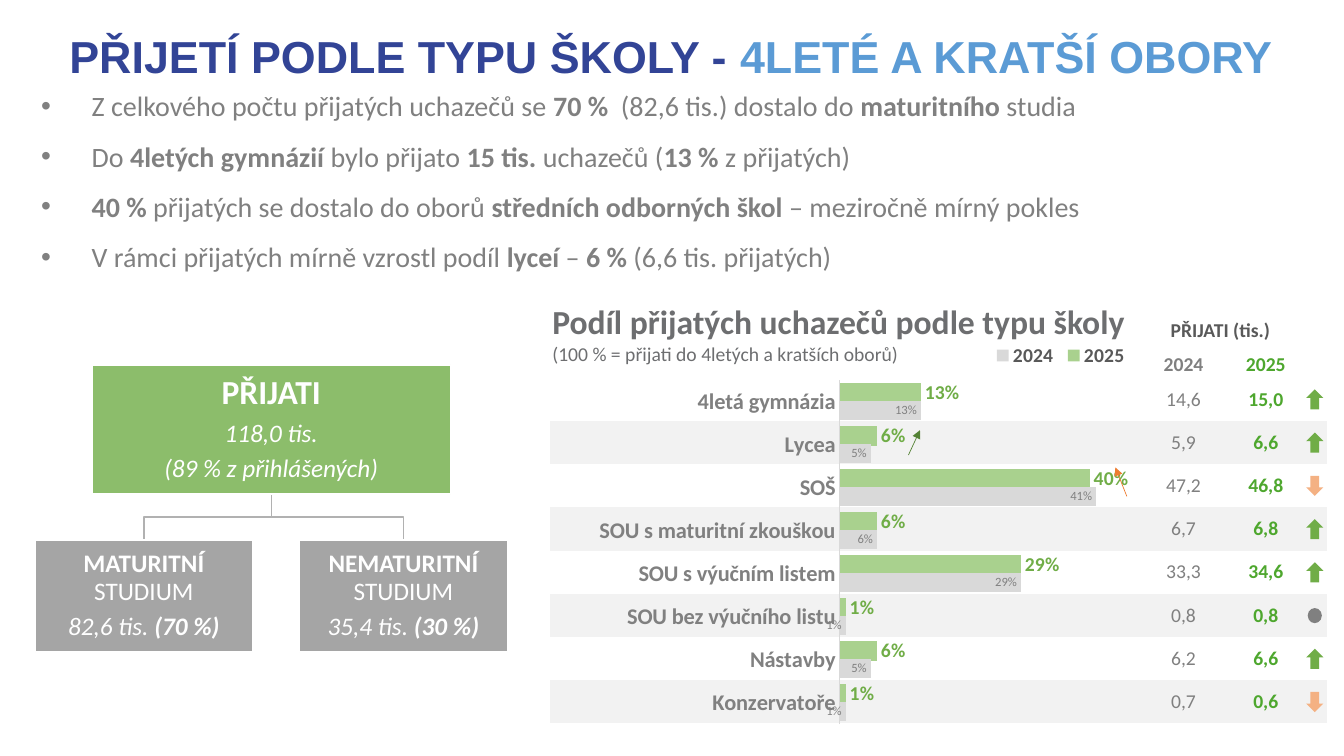
from dataclasses import dataclass

from lxml.etree import SubElement
from pptx import Presentation
from pptx.chart.data import CategoryChartData
from pptx.dml.color import RGBColor
from pptx.enum.chart import XL_CHART_TYPE, XL_LABEL_POSITION, XL_LEGEND_POSITION, XL_TICK_MARK
from pptx.enum.shapes import MSO_CONNECTOR, MSO_SHAPE
from pptx.enum.text import MSO_ANCHOR, PP_ALIGN
from pptx.oxml import parse_xml
from pptx.oxml.ns import nsdecls, qn
from pptx.util import Inches, Pt


@dataclass(frozen=True)
class Theme:
    """Colours, fonts and type sizes of the slide."""
    navy: str = "324496"
    sky: str = "5B9BD5"
    grey: str = "808080"
    dark: str = "595959"
    heading: str = "6D6E70"
    pale: str = "D9D9D9"
    band: str = "F2F2F2"
    rule: str = "B1B1B1"
    white: str = "FFFFFF"
    black: str = "000000"
    green: str = "70AD47"
    soft_green: str = "A9D18E"
    deep_green: str = "548235"
    figure_green: str = "4EA72E"
    orange: str = "ED7D31"
    peach: str = "F4B183"
    title_font: str = "Arial"
    font: str = "Calibri"
    title: int = 32
    large: int = 24
    body: int = 20
    box: int = 18
    axis: int = 16
    small: int = 14
    base: int = 10
    tiny: int = 9


@dataclass(frozen=True)
class Box:
    """An area of the slide in slide units."""
    left: int
    top: int
    width: int
    height: int

    def point(self, x, y):
        """Return the position at the given shares of the box."""
        return int(self.left + x * self.width), int(self.top + y * self.height)

    def inside(self, x, y, width, height):
        """Return the sub-box at the given shares of the box."""
        return Box(*self.point(x, y), int(width * self.width), int(height * self.height))

    def frame(self):
        """Return left, top, width and height."""
        return self.left, self.top, self.width, self.height


THEME = Theme()
SLIDE = Box(0, 0, Inches(13.33), Inches(7.5))
COLUMNS = (5.83, 0.9, 0.73, 0.24)
ROWS = (0.42, 0.26) + (0.43,) * 8
BULLETS = (
    "Z celkového počtu přijatých uchazečů se *70 %*  (82,6 tis.) dostalo do *maturitního* studia",
    "Do *4letých gymnázií *bylo přijato *15 tis. *uchazečů (*13 %* z přijatých)",
    "*40 %* přijatých se dostalo do oborů *středních odborných škol *– meziročně mírný pokles",
    "V rámci přijatých mírně vzrostl podíl *lyceí *–* 6 % *(6,6 tis. přijatých)",
)
SCHOOLS = (
    ("4letá gymnázia", 0.13, 0.13, "14,6", "15,0", "up"),
    ("Lycea", 0.06, 0.05, "5,9", "6,6", "up"),
    ("SOŠ", 0.4, 0.41, "47,2", "46,8", "down"),
    ("SOU s maturitní zkouškou", 0.06, 0.06, "6,7", "6,8", "up"),
    ("SOU s výučním listem", 0.29, 0.29, "33,3", "34,6", "up"),
    ("SOU bez výučního listu", 0.01, 0.01, "0,8", "0,8", "same"),
    ("Nástavby", 0.06, 0.05, "6,2", "6,6", "up"),
    ("Konzervatoře", 0.01, 0.01, "0,7", "0,6", "down"),
)


def grid(left, top, width, height):
    """Return a box measured in a grid of 100 columns and 100 rows."""
    return SLIDE.inside(left / 100, top / 100, width / 100, height / 100)


def set_font(font, size, colour, bold=None, name=THEME.font):
    """Set size, colour, weight and face of a font."""
    font.size, font.bold, font.name = Pt(size), bold, name
    font.color.rgb = RGBColor.from_string(colour)


def write(para, text, size, colour, **options):
    """Fill a paragraph, setting bold the spans between asterisks."""
    set_font(para.font, size, colour, **options)
    for index, piece in enumerate(text.split("*")):
        if piece:
            span = para.add_run()
            span.text = piece
            if index % 2:
                span.font.bold = True


def add_text(page, box):
    """Add a wrapping text box and return its text frame."""
    frame = page.shapes.add_textbox(*box.frame()).text_frame
    frame.word_wrap = True
    return frame


def next_para(frame, index):
    """Return the first paragraph of a frame or append another."""
    return frame.add_paragraph() if index else frame.paragraphs[0]


def add_solid(page, kind, box, colour):
    """Add a filled shape without outline or shadow."""
    shape = page.shapes.add_shape(kind, *box.frame())
    shape.shadow.inherit = False
    shape.fill.solid()
    shape.fill.fore_color.rgb = RGBColor.from_string(colour)
    shape.line.fill.background()
    return shape


def add_title(page, box):
    """Add the two-coloured title."""
    para = add_text(page, box).paragraphs[0]
    para.alignment, para.line_spacing = PP_ALIGN.CENTER, 1.05
    write(para, "PŘIJETÍ PODLE TYPU ŠKOLY - ", THEME.title, THEME.navy, bold=True, name=THEME.title_font)
    span = para.add_run()
    span.text = "4LETÉ A KRATŠÍ OBORY"
    span.font.color.rgb = RGBColor.from_string(THEME.sky)


def add_bullets(page, box):
    """Add the list of findings."""
    frame = add_text(page, box)
    for index, text in enumerate(BULLETS):
        para = next_para(frame, index)
        properties = para._p.get_or_add_pPr()
        properties.set("marL", str(Inches(0.5)))
        properties.set("indent", str(-Inches(0.5)))
        SubElement(properties, qn("a:buFont"), typeface=THEME.title_font)
        SubElement(properties, qn("a:buChar"), char="•")
        if index:
            para.space_before = Pt(12)
        write(para, text, THEME.body, THEME.grey)


def add_card(page, box, colour, opacity, lines):
    """Add one box of the hierarchy from (text, size, italic) lines."""
    card = add_solid(page, MSO_SHAPE.RECTANGLE, box, colour)
    fill = card._element.spPr.find(qn("a:solidFill"))
    SubElement(fill[0], qn("a:alpha"), val=str(opacity * 1000))
    card.line.color.rgb, card.line.width = RGBColor.from_string(THEME.white), Pt(1)
    frame = card.text_frame
    frame.word_wrap, frame.vertical_anchor = True, MSO_ANCHOR.MIDDLE
    frame.margin_left = frame.margin_right = frame.margin_top = frame.margin_bottom = Inches(0.01)
    for index, (text, size, italic) in enumerate(lines):
        para = next_para(frame, index)
        para.alignment, para.line_spacing, para.space_after = PP_ALIGN.CENTER, 0.9, Pt(6)
        write(para, text, size, THEME.white)
        para.font.italic = italic


def add_hierarchy(page, box):
    """Add the admitted total split into two kinds of study."""
    total = box.inside(0.12, 0, 0.76, 0.45)
    branches = (
        (box.inside(0, 0.61, 0.46, 0.39), "*MATURITNÍ* STUDIUM", "82,6 tis. *(70 %)*"),
        (box.inside(0.56, 0.61, 0.44, 0.39), "*NEMATURITNÍ* STUDIUM", "35,4 tis. *(30 %)*"),
    )
    for branch, _, _ in branches:
        start, end = total.point(0.5, 1), branch.point(0.5, 0)
        middle = (start[1] + end[1]) // 2
        builder = page.shapes.build_freeform(*start)
        builder.add_line_segments(((start[0], middle), (end[0], middle), end), close=False)
        link = builder.convert_to_shape()
        link.shadow.inherit = False
        link.fill.background()
        link.line.color.rgb, link.line.width = RGBColor.from_string(THEME.rule), Pt(1)
    add_card(page, total, THEME.green, 80, (
        ("*PŘIJATI*", THEME.large, False),
        ("118,0 tis.", THEME.box, True),
        ("(89 % z přihlášených)", THEME.box, True)))
    for branch, name, count in branches:
        add_card(page, branch, THEME.grey, 70, ((name, THEME.box, False), (count, THEME.box, True)))


def add_figures(page, box):
    """Add the banded table of admitted counts."""
    table = page.shapes.add_table(len(ROWS), len(COLUMNS), *box.frame()).table
    table.first_row = table.horz_banding = False
    table._tbl.tblPr.find(qn("a:tableStyleId")).text = "{2D5ABB26-0587-4C30-8999-92F81FD0307C}"
    for column, share in zip(table.columns, COLUMNS):
        column.width = int(box.width * share / sum(COLUMNS))
    for row, share in zip(table.rows, ROWS):
        row.height = int(box.height * share / sum(ROWS))
    table.cell(0, 1).merge(table.cell(0, 2))
    texts = [("", "PŘIJATI (tis.)", "", ""), ("", "2024", "2025", "")]
    texts += [("", school[3], school[4], "") for school in SCHOOLS]
    for row, line in enumerate(texts):
        for column, text in enumerate(line):
            cell = table.cell(row, column)
            cell.margin_left = cell.margin_right = cell.margin_top = cell.margin_bottom = 0
            cell.vertical_anchor = MSO_ANCHOR.MIDDLE
            if row > 1 and row % 2:
                cell.fill.solid()
                cell.fill.fore_color.rgb = RGBColor.from_string(THEME.band)
            else:
                cell.fill.background()
            para = cell.text_frame.paragraphs[0]
            para.alignment = PP_ALIGN.CENTER
            colour = THEME.dark if row == 0 else THEME.figure_green if column == 2 else THEME.grey
            write(para, text, THEME.small, colour, bold=row < 2 or column == 2)


def add_changes(page, box):
    """Add a marker of the yearly change at the end of each table row."""
    marks = {"up": (MSO_SHAPE.UP_ARROW, THEME.green, 0.17, 0.2),
             "down": (MSO_SHAPE.DOWN_ARROW, THEME.peach, 0.17, 0.2),
             "same": (MSO_SHAPE.OVAL, THEME.grey, 0.14, 0.15)}
    for row, school in enumerate(SCHOOLS, 2):
        kind, colour, width, height = marks[school[5]]
        x, y = box.point(1 - COLUMNS[-1] / 2 / sum(COLUMNS), (sum(ROWS[:row]) + ROWS[row] / 2) / sum(ROWS))
        width, height = Inches(width), Inches(height)
        add_solid(page, kind, Box(x - width // 2, y - height // 2, width, height), colour)


def set_layout(parent, position, inner, *shares):
    """Place a chart element at shares of the chart area."""
    for old in parent.findall(qn("c:layout")):
        parent.remove(old)
    tags = [("layoutTarget", "inner")] if inner else []
    tags += [("xMode", "edge"), ("yMode", "edge"), *zip("xywh", shares)]
    body = "".join(f'<c:{tag} val="{value}"/>' for tag, value in tags)
    layout = f'<c:layout {nsdecls("c")}><c:manualLayout>{body}</c:manualLayout></c:layout>'
    parent.insert(position, parse_xml(layout))


def add_share_chart(page, box):
    """Add the bar chart of shares by school type with its trend arrows."""
    data = CategoryChartData(number_format="0%")
    data.categories = [school[0] for school in SCHOOLS]
    data.add_series("2025", [school[1] for school in SCHOOLS])
    data.add_series("2024", [school[2] for school in SCHOOLS])
    chart = page.shapes.add_chart(XL_CHART_TYPE.BAR_CLUSTERED, *box.frame(), data).chart
    chart.has_title = False
    set_font(chart.font, THEME.base, THEME.black)
    plot = chart.plots[0]
    plot.gap_width, plot.overlap, plot.vary_by_categories = 30, 10, False
    styles = ((THEME.soft_green, XL_LABEL_POSITION.OUTSIDE_END, THEME.small, THEME.green, True),
              (THEME.pale, XL_LABEL_POSITION.INSIDE_END, THEME.tiny, THEME.grey, False))
    for series, (colour, position, size, label_colour, bold) in zip(plot.series, styles):
        series.format.fill.solid()
        series.format.fill.fore_color.rgb = RGBColor.from_string(colour)
        labels = series.data_labels
        labels.show_value, labels.position = True, position
        labels.number_format, labels.number_format_is_linked = "0%", False
        set_font(labels.font, size, label_colour, bold=bold)
    names, values = chart.category_axis, chart.value_axis
    names.reverse_order, names.major_tick_mark = True, XL_TICK_MARK.NONE
    names.format.line.color.rgb, names.format.line.width = RGBColor.from_string(THEME.pale), Pt(0.75)
    set_font(names.tick_labels.font, THEME.axis, THEME.grey, bold=True)
    values.visible = values.has_major_gridlines = False
    values.minimum_scale, values.maximum_scale = 0, 0.45
    chart.has_legend = True
    legend = chart.legend
    legend.position, legend.include_in_layout = XL_LEGEND_POSITION.BOTTOM, False
    set_font(legend.font, THEME.small, THEME.dark, bold=True)
    set_layout(legend._element, 1, False, 0.74, 0.03, 0.25, 0.08)
    area = chart._chartSpace.chart.plotArea
    set_layout(area, 0, True, 0.48, 0.13, 0.49, 0.83)
    clear = f'<c:spPr {nsdecls("c", "a")}><a:noFill/><a:ln><a:noFill/></a:ln></c:spPr>'
    area.append(parse_xml(clear))
    chart._chartSpace.chart.addnext(parse_xml(clear))
    for start, end, colour in (((0.6, 0.31), (0.62, 0.25), THEME.deep_green),
                               ((0.98, 0.41), (0.96, 0.34), THEME.orange)):
        trend = page.shapes.add_connector(MSO_CONNECTOR.STRAIGHT, *box.point(*start), *box.point(*end))
        trend.line.color.rgb, trend.line.width = RGBColor.from_string(colour), Pt(0.5)
        SubElement(trend._element.spPr.find(qn("a:ln")), qn("a:tailEnd"), type="triangle")
        SubElement(trend._element.spPr, qn("a:effectLst"))


def add_chart_heading(page, box):
    """Add the chart heading and its base note."""
    frame = add_text(page, box)
    write(next_para(frame, 0), "Podíl přijatých uchazečů podle typu školy", THEME.large, THEME.heading, bold=True)
    write(next_para(frame, 1), "(100 % = přijati do 4letých a kratších oborů)", THEME.small, THEME.heading)


def main():
    """Build the slide and save it."""
    deck = Presentation()
    deck.slide_width, deck.slide_height = SLIDE.width, SLIDE.height
    page = deck.slides.add_slide(deck.slide_layouts[6])
    figures = grid(40.89, 40.93, 57.84, 54.8)
    add_figures(page, figures)
    add_hierarchy(page, grid(2.63, 48.27, 35.11, 38))
    add_title(page, grid(4.13, 2.8, 91.6, 16.93))
    add_bullets(page, grid(2.33, 11.07, 84.32, 26))
    add_share_chart(page, grid(41.94, 43.2, 42.76, 54.8))
    add_chart_heading(page, grid(40.36, 39.2, 44.94, 9.87))
    add_changes(page, figures)
    deck.save("out.pptx")


if __name__ == "__main__":
    main()
